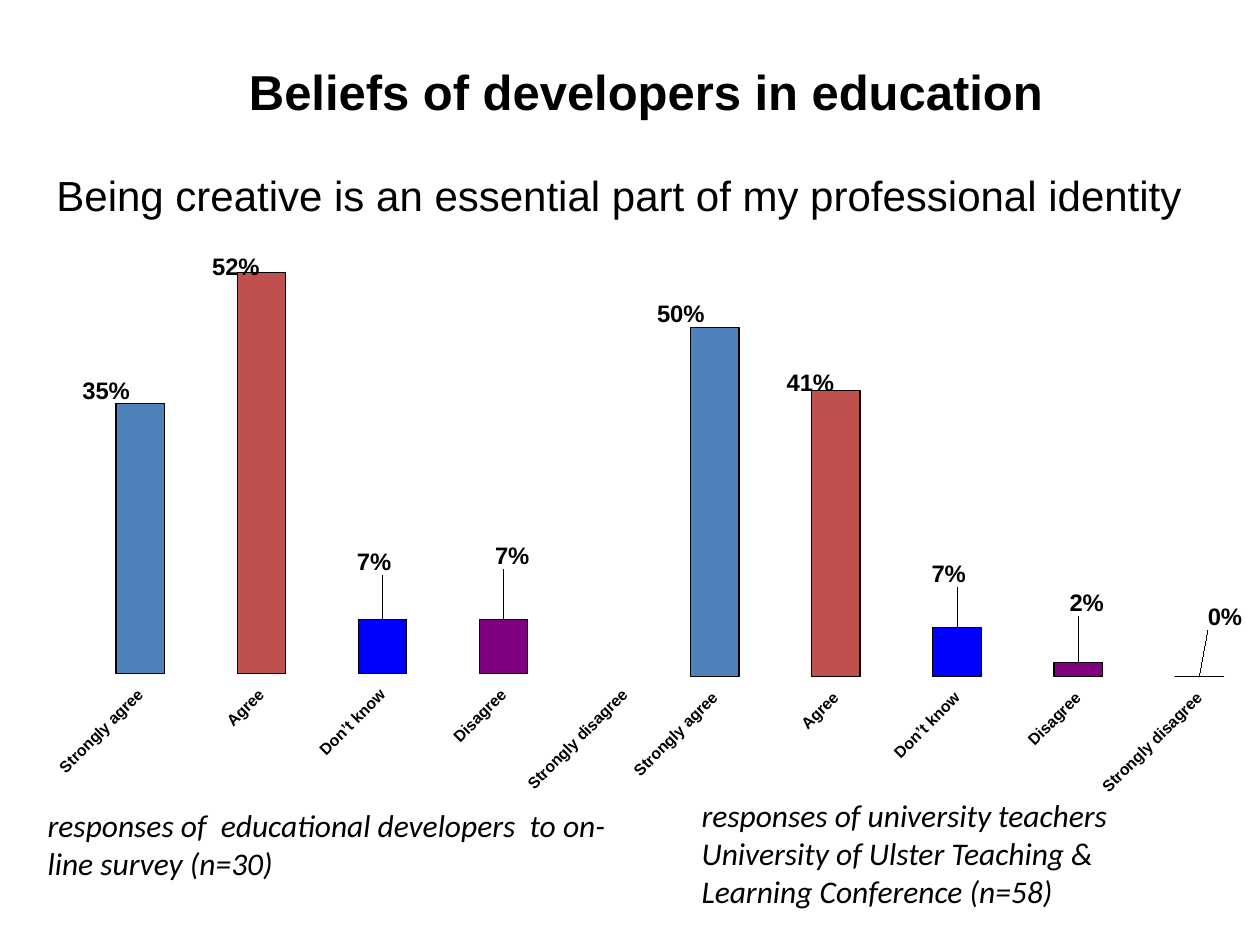
from lxml import etree
from pptx import Presentation
from pptx.chart.data import CategoryChartData
from pptx.dml.color import RGBColor
from pptx.enum.chart import (XL_CHART_TYPE, XL_LABEL_POSITION, XL_TICK_LABEL_POSITION,
                             XL_TICK_MARK)
from pptx.enum.text import MSO_ANCHOR
from pptx.oxml.ns import qn
from pptx.util import Inches, Pt

COLUMNS = XL_CHART_TYPE.COLUMN_CLUSTERED
OUTSIDE_END = XL_LABEL_POSITION.OUTSIDE_END
LABELS_LOW = XL_TICK_LABEL_POSITION.LOW
LABELS_NONE = XL_TICK_LABEL_POSITION.NONE
TICK_CROSS = XL_TICK_MARK.CROSS
TOP, MIDDLE = MSO_ANCHOR.TOP, MSO_ANCHOR.MIDDLE

ANSWERS = [" Strongly agree", " Agree", " Don’t know", " Disagree", " Strongly disagree"]
ANSWER_COLORS = ["4F81BD", "C0504D", "0000FF", "800080", "EEECE1"]
# Shift of each value label, as a share of the chart's width and height
LABEL_SHIFTS = [(-0.04, 0.01), (-0.03, 0.02), (-0.01, -0.06), (0.01, -0.07), (0.03, -0.07)]
PLOT_AREA = {"x": 0.25, "y": 0.04, "w": 0.71, "h": 0.72}
BLACK = "000000"


def rgb(color):
    return RGBColor.from_string(color)


def set_font(font, size, name="Arial", bold=False, italic=False):
    font.name, font.size = name, Pt(size)
    font.bold, font.italic = bold, italic
    font.color.rgb = rgb(BLACK)


def add_text(slide, box, text, size, anchor=TOP, wrap=True, **style):
    frame = slide.shapes.add_textbox(*map(Inches, box)).text_frame
    frame.word_wrap = wrap
    frame.vertical_anchor = anchor
    paragraph = frame.paragraphs[0]
    paragraph.text = text
    set_font(paragraph.font, size, **style)


def manual_layout(settings):
    layout = etree.Element(qn("c:layout"))
    manual = etree.SubElement(layout, qn("c:manualLayout"))
    for tag, value in settings.items():
        etree.SubElement(manual, qn(f"c:{tag}")).set("val", str(value))
    return layout


def place_plot(chart):
    plot_area = chart._chartSpace.chart.plotArea
    for layout in plot_area.findall(qn("c:layout")):
        plot_area.remove(layout)
    plot_area.insert(0, manual_layout(
        {"layoutTarget": "inner", "xMode": "edge", "yMode": "edge", **PLOT_AREA}))


def style_axes(chart):
    for axis in (chart.category_axis, chart.value_axis):
        axis.has_major_gridlines = False
        axis.major_tick_mark = TICK_CROSS
        axis.format.line.fill.background()
    answers, shares = chart.category_axis, chart.value_axis
    answers.tick_label_position = LABELS_LOW
    set_font(answers.tick_labels.font, 9.1, bold=True)
    body = answers._element.find(qn("c:txPr")).find(qn("a:bodyPr"))
    body.set("rot", "-2700000")  # 45 degrees, rising
    body.set("vert", "horz")
    shares.tick_label_position = LABELS_NONE
    shares.minimum_scale, shares.maximum_scale = 0, 0.6


def style_bars(series, values):
    series.format.fill.solid()
    series.format.fill.fore_color.rgb = rgb(ANSWER_COLORS[0])
    series.invert_if_negative = False
    labels = series.data_labels
    labels.show_value = True
    labels.number_format, labels.number_format_is_linked = "0%", False
    set_font(labels.font, 13.6, bold=True)
    for i, (value, color, shift) in enumerate(zip(values, ANSWER_COLORS, LABEL_SHIFTS)):
        if value is None:
            continue
        point = series.points[i]
        point.format.fill.solid()
        point.format.fill.fore_color.rgb = rgb(color)
        point.format.line.color.rgb = rgb(BLACK)
        point.format.line.width = Pt(0.75)
        label = point.data_label
        set_font(label.font, 13.6, bold=True)
        label.position = OUTSIDE_END
        # The label's own layout follows its index
        element = labels._element.findall(qn("c:dLbl"))[-1]
        element.insert(1, manual_layout(dict(zip("xy", shift))))


def add_survey(slide, chart_box, values, caption_box, caption):
    """One group's answers: a column chart and the caption below it."""
    data = CategoryChartData(number_format="0%")
    data.categories = ANSWERS
    data.add_series("Series 1", values)
    chart = slide.shapes.add_chart(COLUMNS, *map(Inches, chart_box), data).chart
    chart.has_title = chart.has_legend = False
    set_font(chart.font, 6, bold=True)
    plot = chart.plots[0]
    plot.gap_width = 150
    plot.vary_by_categories = False
    place_plot(chart)
    style_axes(chart)
    style_bars(plot.series[0], values)
    add_text(slide, caption_box, caption, 18, name="Calibri", italic=True)


def main():
    prs = Presentation()
    prs.slide_width, prs.slide_height = Inches(10), Inches(7.5)
    slide = prs.slides.add_slide(prs.slide_layouts[6])

    # Survey of university teachers, on the right
    add_survey(slide, (3.5, 1.86, 6.77, 4.62), (0.5, 0.41, 0.07, 0.02, 0),
               (5.47, 6.27, 3.94, 1.01),
               "responses of university teachers University of Ulster Teaching & "
               "Learning Conference (n=58)")
    # Survey of educational developers, on the left
    add_survey(slide, (-1.06, 1.47, 6.77, 5.1), (0.35, 0.52, 0.07, 0.07, None),
               (0.28, 6.35, 4.65, 0.71),
               "responses of  educational developers  to on-line survey (n=30)")

    # Title and statement
    add_text(slide, (1.77, 0.44, 6.8, 0.57), " Beliefs of developers in education", 28,
             wrap=False, bold=True)
    add_text(slide, (0.35, 0.92, 9.33, 1.25),
             "Being creative is an essential part of my professional identity", 24,
             anchor=MIDDLE)
    prs.save("out.pptx")


if __name__ == "__main__":
    main()
